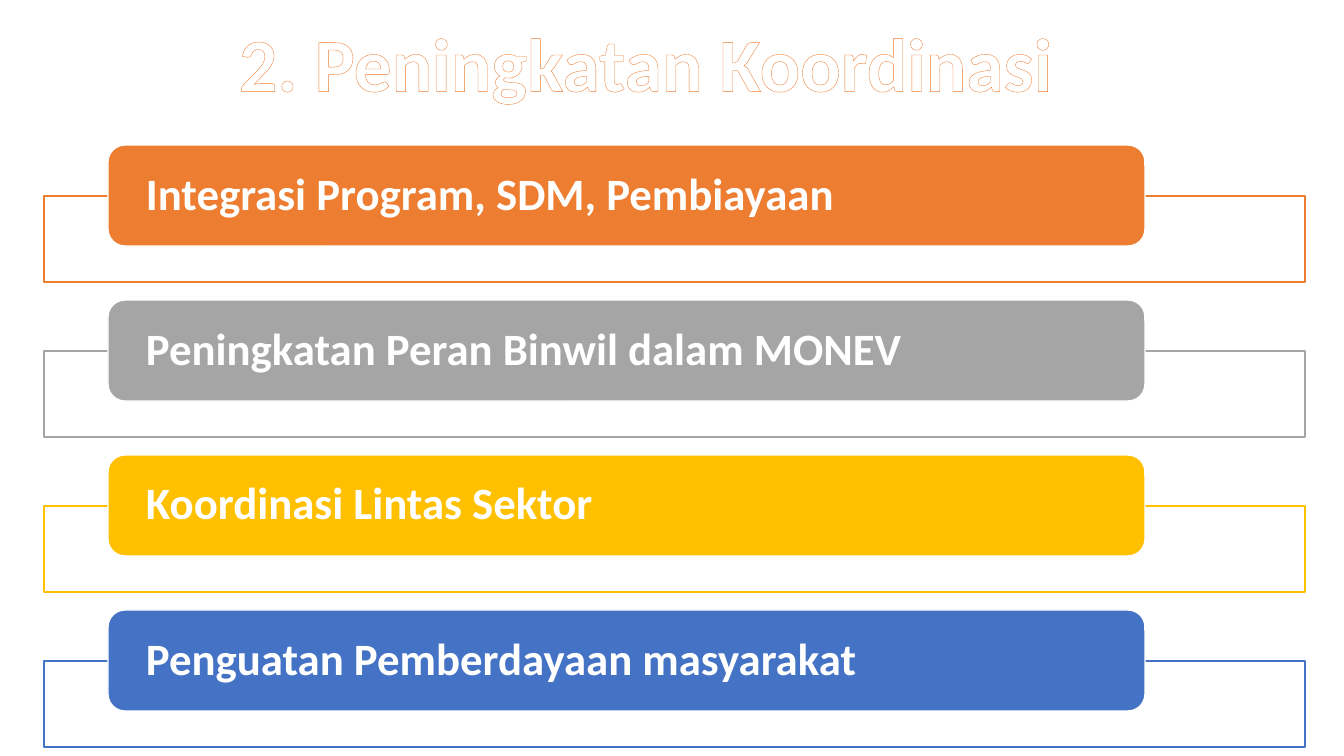
"""Build the slide on improving coordination."""
from dataclasses import dataclass

from lxml import etree
from pptx import Presentation
from pptx.dml.color import RGBColor
from pptx.enum.shapes import MSO_SHAPE
from pptx.enum.text import MSO_ANCHOR, MSO_AUTO_SIZE, PP_ALIGN
from pptx.oxml.ns import qn
from pptx.util import Emu, Pt

RECTANGLE, ROUNDED = MSO_SHAPE.RECTANGLE, MSO_SHAPE.ROUNDED_RECTANGLE
TOP, MIDDLE = MSO_ANCHOR.TOP, MSO_ANCHOR.MIDDLE
LEFT, CENTER = PP_ALIGN.LEFT, PP_ALIGN.CENTER
FIT_SHAPE = MSO_AUTO_SIZE.SHAPE_TO_FIT_TEXT
TITLE_ONLY = 5
PX_PER_INCH = 100.8
ROW_PITCH = 155


@dataclass(frozen=True)
class Theme:
    """Colours, font and type sizes of the slide."""
    font: str = "Calibri"
    white: str = "FFFFFF"
    orange: str = "ED7D31"
    grey: str = "A5A5A5"
    gold: str = "FFC000"
    blue: str = "4472C4"
    title_size: int = 54
    label_size: int = 32
    border: float = 1
    title_outline: float = 0.52


THEME = Theme()
MEASURES = (
    ("Integrasi Program, SDM, Pembiayaan", THEME.orange),
    ("Peningkatan Peran Binwil dalam MONEV", THEME.grey),
    ("Koordinasi Lintas Sektor", THEME.gold),
    ("Penguatan Pemberdayaan masyarakat", THEME.blue),
)


def px(length):
    """Turn a length in px into EMU."""
    return Emu(round(length * 914400 / PX_PER_INCH))


def rgb(colour):
    """Turn a hex string into a colour."""
    return RGBColor.from_string(colour)


def style_font(font, size):
    """Set the bold white face shared by all text."""
    font.name, font.size, font.bold = THEME.font, Pt(size), True
    font.color.rgb = rgb(THEME.white)


def outline_text(run, colour, width):
    """Draw a coloured outline around the letters of a run."""
    line = etree.Element(qn("a:ln"), w=str(Pt(width)))
    fill = etree.SubElement(line, qn("a:solidFill"))
    etree.SubElement(fill, qn("a:srgbClr"), val=colour)
    run._r.get_or_add_rPr().insert(0, line)


def set_title(slide, text):
    """Place the outlined title."""
    title = slide.shapes.title
    title.left, title.top, title.width, title.height = map(px, (225, 11, 842, 102))
    frame = title.text_frame
    frame.text = text
    frame.word_wrap, frame.auto_size = False, FIT_SHAPE
    frame.vertical_anchor = TOP
    heading = frame.paragraphs[0]
    heading.alignment = CENTER
    run = heading.runs[0]
    style_font(run.font, THEME.title_size)
    outline_text(run, THEME.orange, THEME.title_outline)


def add_box(slide, kind, box, fill, border):
    """Add a filled shape with a thin border."""
    shape = slide.shapes.add_shape(kind, *map(px, box))
    shape.shadow.inherit = False
    shape.fill.solid()
    shape.fill.fore_color.rgb = rgb(fill)
    shape.line.color.rgb = rgb(border)
    shape.line.width = Pt(THEME.border)
    return shape


def add_frame(slide, top, colour):
    """Add the nearly opaque frame behind a bar."""
    frame = add_box(slide, RECTANGLE, (44, top, 1261, 86), THEME.white, colour)
    tint = frame.fill._xPr.find(qn("a:solidFill")).find(qn("a:srgbClr"))
    etree.SubElement(tint, qn("a:alpha"), val="90000")


def add_bar(slide, top, text, colour):
    """Add a rounded bar that carries its label."""
    bar = add_box(slide, ROUNDED, (108, top, 1037, 101), colour, THEME.white)
    frame = bar.text_frame
    frame.text = text
    frame.word_wrap, frame.vertical_anchor = True, MIDDLE
    frame.margin_left = frame.margin_right = px(33)
    frame.margin_top = frame.margin_bottom = 0
    label = frame.paragraphs[0]
    label.alignment, label.line_spacing = LEFT, 0.9
    style_font(label.font, THEME.label_size)


def main():
    """Build and save the slide."""
    deck = Presentation()
    deck.slide_width, deck.slide_height = px(1344), px(756)
    slide = deck.slides.add_slide(deck.slide_layouts[TITLE_ONLY])
    set_title(slide, "2. Peningkatan Koordinasi")
    for row, (text, colour) in enumerate(MEASURES):
        offset = row * ROW_PITCH
        add_frame(slide, 196 + offset, colour)
        add_bar(slide, 145 + offset, text, colour)
    deck.save("out.pptx")


if __name__ == "__main__":
    main()
